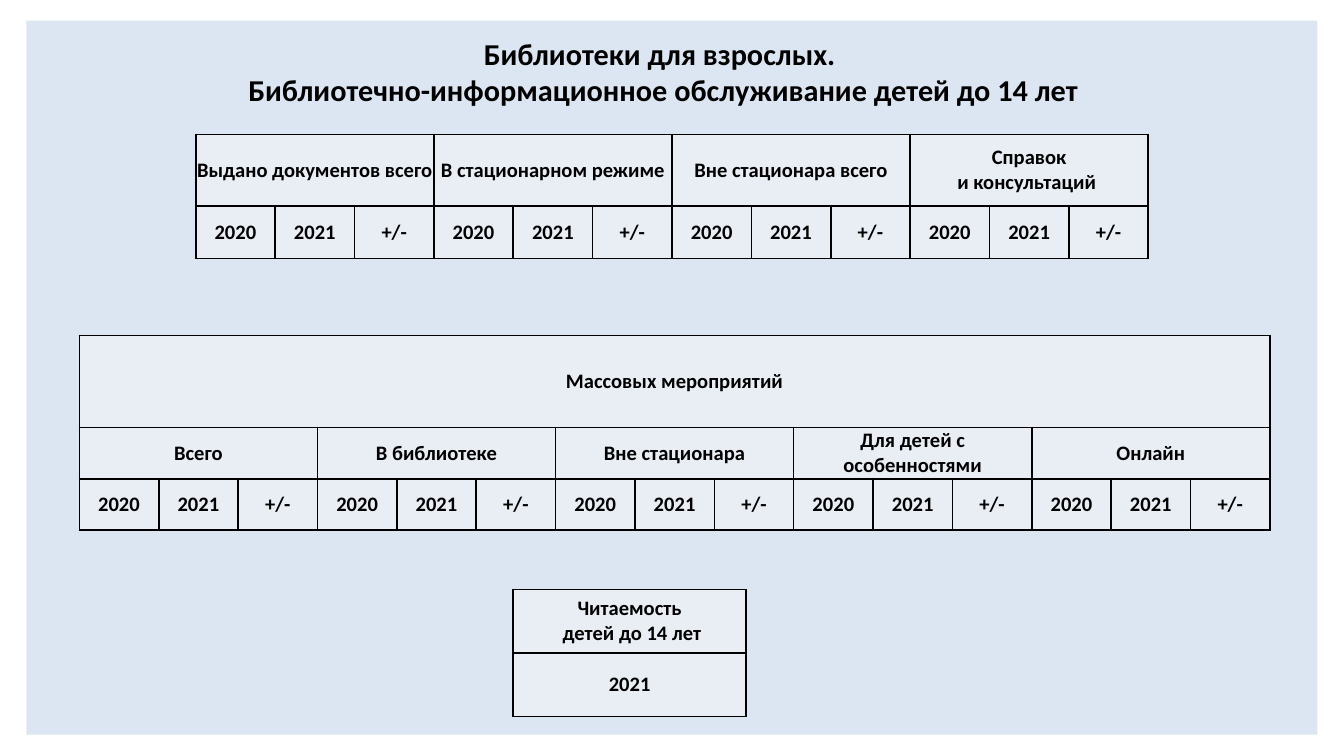
"""Build a slide of empty library-service tables for readers under 14."""
from dataclasses import dataclass

from lxml import etree
from pptx import Presentation
from pptx.dml.color import RGBColor
from pptx.enum.shapes import MSO_SHAPE
from pptx.enum.text import MSO_ANCHOR, PP_ALIGN
from pptx.oxml.ns import qn
from pptx.util import Cm, Pt

RECTANGLE = MSO_SHAPE.RECTANGLE
MIDDLE = MSO_ANCHOR.MIDDLE
CENTER = PP_ALIGN.CENTER


@dataclass(frozen=True)
class Theme:
    font: str = "Calibri"
    ink: str = "000000"
    panel: str = "DCE6F2"
    cell: str = "E9EDF4"
    title_size: float = 16.2
    cell_size: float = 11
    border: float = 1


@dataclass(frozen=True)
class Grid:
    left: float
    top: float
    column_width: float
    column_count: int
    row_heights: tuple[float, ...]
    rows: tuple[tuple[str, ...], ...]


THEME = Theme()
YEARS = ("2020", "2021", "+/-")
TITLE = "Библиотеки для взрослых. \nБиблиотечно-информационное обслуживание детей до 14 лет"
GRIDS = (
    Grid(3.7, 2.54, 1.5, 12, (1.35, 1), (
        ("Выдано документов всего", "В стационарном режиме",
         "Вне стационара всего", "Справок\nи консультаций "),
        YEARS * 4,
    )),
    Grid(1.5, 6.34, 1.5, 15, (1.74, 0.97, 0.97), (
        ("Массовых мероприятий",),
        ("Всего", "В библиотеке", "Вне стационара", "Для детей с особенностями", "Онлайн"),
        YEARS * 5,
    )),
    Grid(9.7, 11.14, 4.4, 1, (1.2, 1.2), (
        ("Читаемость\n детей до 14 лет",),
        ("2021",),
    )),
)


def style_text(frame, size: float) -> None:
    frame.word_wrap = True
    for paragraph in frame.paragraphs:
        paragraph.alignment = CENTER
        font = paragraph.font
        font.name = THEME.font
        font.size = Pt(size)
        font.bold = True
        font.color.rgb = RGBColor.from_string(THEME.ink)


def add_borders(cell) -> None:
    properties = cell._tc.get_or_add_tcPr()
    for position, side in enumerate(("a:lnL", "a:lnR", "a:lnT", "a:lnB")):
        line = etree.Element(qn(side), w=str(Pt(THEME.border)))
        fill = etree.SubElement(line, qn("a:solidFill"))
        etree.SubElement(fill, qn("a:srgbClr"), val=THEME.ink)
        properties.insert(position, line)


def style_cell(cell) -> None:
    cell.fill.solid()
    cell.fill.fore_color.rgb = RGBColor.from_string(THEME.cell)
    cell.margin_left = cell.margin_right = cell.margin_top = cell.margin_bottom = 0
    cell.vertical_anchor = MIDDLE
    style_text(cell.text_frame, THEME.cell_size)
    add_borders(cell)


def draw_grid(slide, grid: Grid) -> None:
    table = slide.shapes.add_table(
        len(grid.rows), grid.column_count, Cm(grid.left), Cm(grid.top),
        Cm(grid.column_width * grid.column_count), Cm(sum(grid.row_heights)),
    ).table
    table.first_row = table.horz_banding = False
    for column in table.columns:
        column.width = Cm(grid.column_width)
    for row_index, (height, labels) in enumerate(zip(grid.row_heights, grid.rows)):
        table.rows[row_index].height = Cm(height)
        span = grid.column_count // len(labels)
        for label_index, label in enumerate(labels):
            start = label_index * span
            heading = table.cell(row_index, start)
            heading.text_frame.text = label
            if span > 1:
                heading.merge(table.cell(row_index, start + span - 1))
    for cell in table.iter_cells():
        style_cell(cell)


def draw_panel(slide) -> None:
    panel = slide.shapes.add_shape(RECTANGLE, Cm(0.5), Cm(0.39), Cm(24.4), Cm(13.5))
    panel.shadow.inherit = False
    panel.fill.solid()
    panel.fill.fore_color.rgb = RGBColor.from_string(THEME.panel)
    panel.line.fill.background()


def draw_title(slide) -> None:
    title = slide.shapes.add_textbox(Cm(1.1), Cm(0.54), Cm(22.86), Cm(1.63))
    title.fill.solid()
    title.fill.fore_color.rgb = RGBColor.from_string(THEME.panel)
    frame = title.text_frame
    frame.vertical_anchor = MIDDLE
    frame.paragraphs[0].text = TITLE.replace("\n", "\v")
    style_text(frame, THEME.title_size)


def main() -> None:
    presentation = Presentation()
    presentation.slide_width = Cm(25.4)
    presentation.slide_height = Cm(14.29)
    slide = presentation.slides.add_slide(presentation.slide_layouts[6])
    draw_panel(slide)
    draw_title(slide)
    for grid in GRIDS:
        draw_grid(slide, grid)
    presentation.save("out.pptx")


if __name__ == "__main__":
    main()
